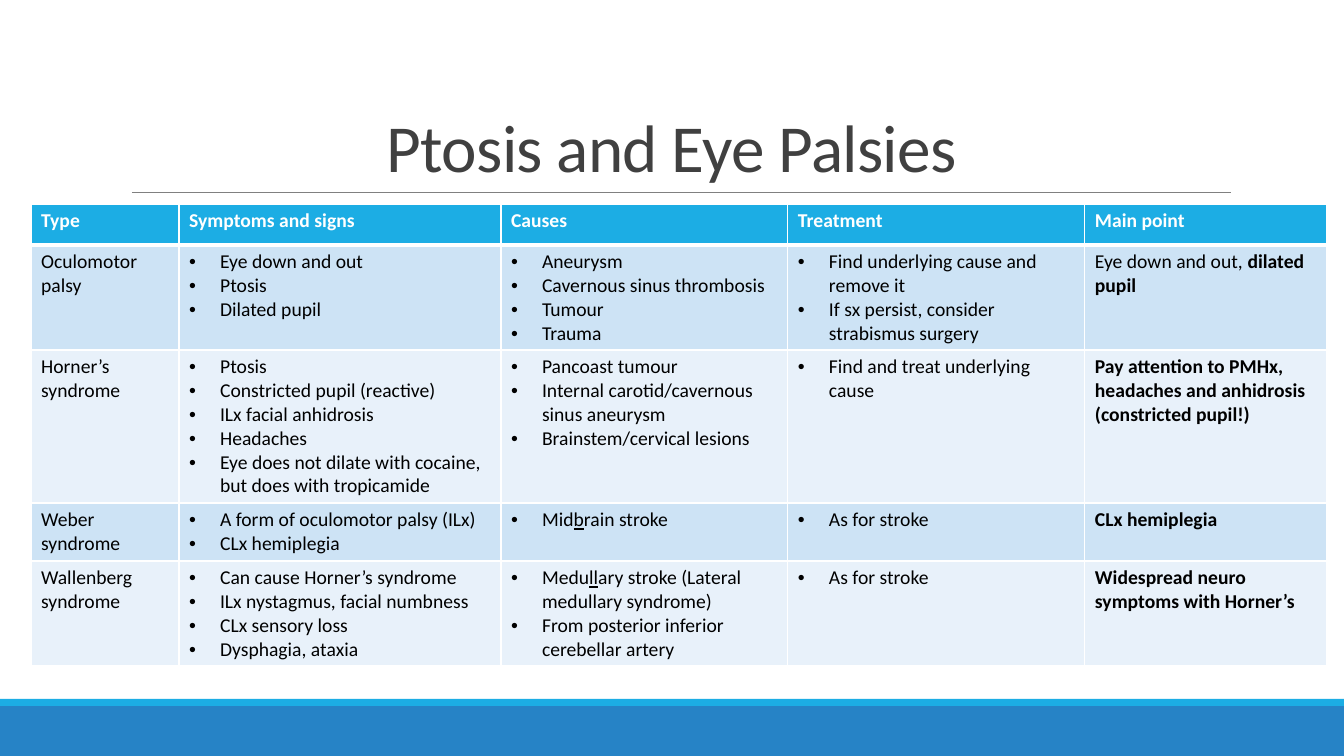
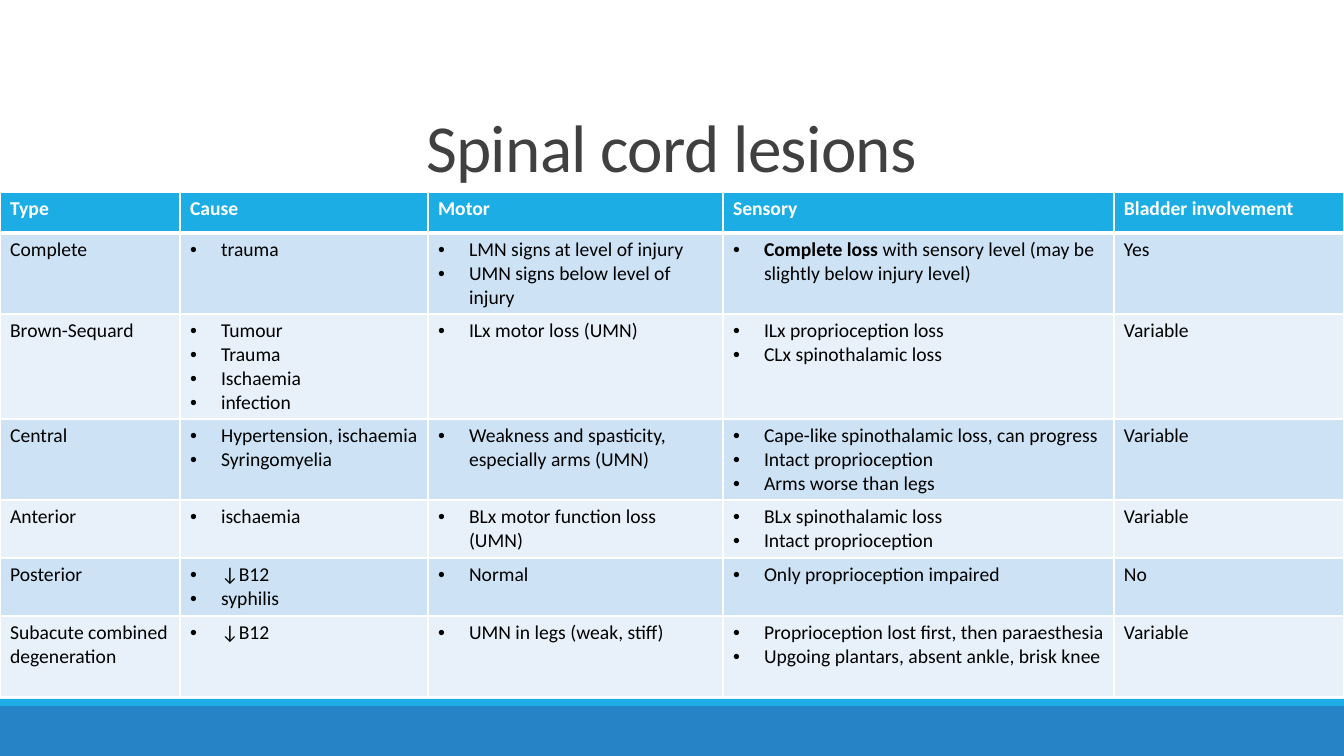
from lxml import etree
from pptx import Presentation
from pptx.dml.color import RGBColor
from pptx.enum.shapes import MSO_CONNECTOR, MSO_SHAPE
from pptx.enum.text import MSO_ANCHOR, PP_ALIGN
from pptx.oxml.ns import qn
from pptx.util import Emu, Pt

# Shared style
FONT = "Calibri"
WHITE, BLACK, TITLE_GREY, RULE_GREY = "FFFFFF", "000000", "404040", "808080"
CYAN, BLUE = "1CADE4", "2683C6"
ROW_TINTS = ("CDE3F5", "E8F1FA")
SLIDE_W, SLIDE_H = 1344, 756
TITLE_BOX = (179, 31, 985, 160)
RULE_X, RULE_Y = (132, 1231), 192
BANDS = [((0, 706, SLIDE_W, 50), BLUE), ((0, 699, SLIDE_W, 7), CYAN)]
HEADER_H, BULLET_INDENT = 41, 31

# Content: a list in a cell is bulleted, *...* is bold, _..._ is underlined
SLIDES = [
    {
        "title": "Ptosis and Eye Palsies",
        "origin": (31, 204),
        "columns": [148, 322, 287, 297, 242],
        "row_heights": [105, 153, 58, 105],
        "header": ["Type", "Symptoms and signs", "Causes", "Treatment", "Main point"],
        "rows": [
            ["Oculomotor palsy",
             ["Eye down and out", "Ptosis", "Dilated pupil"],
             ["Aneurysm", "Cavernous sinus thrombosis", "Tumour", "Trauma"],
             ["Find underlying cause and remove it",
              "If sx persist, consider strabismus surgery"],
             "Eye down and out, *dilated pupil*"],
            ["Horner’s syndrome",
             ["Ptosis", "Constricted pupil (reactive)", "ILx facial anhidrosis", "Headaches",
              "Eye does not dilate with cocaine, but does with tropicamide"],
             ["Pancoast tumour", "Internal carotid/cavernous sinus aneurysm",
              "Brainstem/cervical lesions"],
             ["Find and treat underlying cause"],
             "*Pay attention to PMHx, headaches and anhidrosis (constricted pupil!)*"],
            ["Weber syndrome",
             ["A form of oculomotor palsy (ILx)", "CLx hemiplegia"],
             ["Mid_b_rain stroke"],
             ["As for stroke"],
             "*CLx hemiplegia*"],
            ["Wallenberg syndrome",
             ["Can cause Horner’s syndrome", "ILx nystagmus, facial numbness",
              "CLx sensory loss", "Dysphagia, ataxia"],
             ["Medu_ll_ary stroke (Lateral medullary syndrome)",
              "From posterior inferior cerebellar artery"],
             ["As for stroke"],
             "*Widespread neuro symptoms with Horner’s*"],
        ],
    },
    {
        "title": "Spinal cord lesions",
        "origin": (0, 192),
        "columns": [180, 248, 295, 391, 230],
        "row_heights": [81, 105, 81, 58, 58, 81],
        "header": ["Type", "Cause", "Motor", "Sensory", "Bladder involvement"],
        "rows": [
            ["Complete",
             ["trauma"],
             ["LMN signs at level of injury", "UMN signs below level of injury"],
             ["*Complete loss *with sensory level (may be slightly below injury level)"],
             "Yes"],
            ["Brown-Sequard",
             ["Tumour", "Trauma", "Ischaemia", "infection"],
             ["ILx motor loss (UMN)"],
             ["ILx proprioception loss", "CLx spinothalamic loss"],
             "Variable"],
            ["Central",
             ["Hypertension, ischaemia", "Syringomyelia"],
             ["Weakness and spasticity, especially arms (UMN)"],
             ["Cape-like spinothalamic loss, can progress", "Intact proprioception",
              "Arms worse than legs"],
             "Variable"],
            ["Anterior",
             ["ischaemia"],
             ["BLx motor function loss (UMN)"],
             ["BLx spinothalamic loss", "Intact proprioception"],
             "Variable"],
            ["Posterior",
             ["↓B12", "syphilis"],
             ["Normal"],
             ["Only proprioception impaired"],
             "No"],
            ["Subacute combined degeneration",
             ["↓B12"],
             ["UMN in legs (weak, stiff)"],
             ["Proprioception lost first, then paraesthesia",
              "Upgoing plantars, absent ankle, brisk knee"],
             "Variable"],
        ],
    },
]


def px(length):
    return Emu(round(length * 914400 / 100.8))


def rgb(value):
    return RGBColor.from_string(value)


def write(paragraph, text, size=14, color=BLACK, bold=False, spacing=None):
    """Write text with *bold* and _underlined_ parts into a paragraph."""
    for i, part in enumerate(text.split("*")):
        for j, piece in enumerate(part.split("_")):
            if not piece:
                continue
            run = paragraph.add_run()
            run.text = piece
            font = run.font
            font.name, font.size, font.color.rgb = FONT, Pt(size), rgb(color)
            font.bold = bold or i % 2 == 1
            font.underline = j % 2 == 1
            if spacing is not None:
                run._r.get_or_add_rPr().set("spc", str(round(spacing * 100)))


def add_bullet(paragraph):
    properties = paragraph._p.get_or_add_pPr()
    properties.set("marL", str(px(BULLET_INDENT)))
    properties.set("indent", str(-px(BULLET_INDENT)))
    etree.SubElement(properties, qn("a:buFont")).set("typeface", "Arial")
    etree.SubElement(properties, qn("a:buChar")).set("char", "•")


def set_borders(cell, bottom=1):
    properties = cell._tc.get_or_add_tcPr()
    widths = {"a:lnL": 1, "a:lnR": 1, "a:lnT": 1, "a:lnB": bottom}
    for position, (side, width) in enumerate(widths.items()):
        border = etree.Element(qn(side), w=str(Pt(width)))
        fill = etree.SubElement(border, qn("a:solidFill"))
        etree.SubElement(fill, qn("a:srgbClr")).set("val", WHITE)
        properties.insert(position, border)


def fill_cell(cell, content, fill, bottom=1, **text_format):
    cell.fill.solid()
    cell.fill.fore_color.rgb = rgb(fill)
    set_borders(cell, bottom)
    bulleted = isinstance(content, list)
    for i, text in enumerate(content if bulleted else [content]):
        frame = cell.text_frame
        paragraph = frame.add_paragraph() if i else frame.paragraphs[0]
        if bulleted:
            add_bullet(paragraph)
        write(paragraph, text, **text_format)


def add_frame(slide, title):
    """Bands, rule and title that every slide has."""
    for box, color in BANDS:
        band = slide.shapes.add_shape(MSO_SHAPE.RECTANGLE, *map(px, box))
        band.shadow.inherit = False
        band.fill.solid()
        band.fill.fore_color.rgb = rgb(color)
        band.line.fill.background()

    left, right = RULE_X
    rule = slide.shapes.add_connector(
        MSO_CONNECTOR.STRAIGHT, px(left), px(RULE_Y), px(right), px(RULE_Y))
    rule.line.color.rgb = rgb(RULE_GREY)
    rule.line.width = Pt(0.5)
    etree.SubElement(rule._element.spPr, qn("a:effectLst"))

    frame = slide.shapes.add_textbox(*map(px, TITLE_BOX)).text_frame
    frame.word_wrap = True
    frame.vertical_anchor = MSO_ANCHOR.BOTTOM
    heading = frame.paragraphs[0]
    heading.alignment = PP_ALIGN.CENTER
    heading.line_spacing = 0.85
    write(heading, title, size=48, color=TITLE_GREY, spacing=-0.5)


def add_grid(slide, data):
    heights = [HEADER_H] + data["row_heights"]
    columns = data["columns"]
    size = (sum(columns), sum(heights))
    table = slide.shapes.add_table(
        len(heights), len(columns), *map(px, data["origin"] + size)).table
    table.horz_banding = False
    for column, width in zip(table.columns, columns):
        column.width = px(width)
    for row, height in zip(table.rows, heights):
        row.height = px(height)

    for c, label in enumerate(data["header"]):
        fill_cell(table.cell(0, c), label, CYAN, bottom=3, color=WHITE, bold=True)
    for r, entries in enumerate(data["rows"]):
        for c, content in enumerate(entries):
            fill_cell(table.cell(r + 1, c), content, ROW_TINTS[r % 2])


def main():
    deck = Presentation()
    deck.slide_width, deck.slide_height = px(SLIDE_W), px(SLIDE_H)
    for data in SLIDES:
        slide = deck.slides.add_slide(deck.slide_layouts[6])
        add_frame(slide, data["title"])
        add_grid(slide, data)
    deck.save("out.pptx")


if __name__ == "__main__":
    main()
